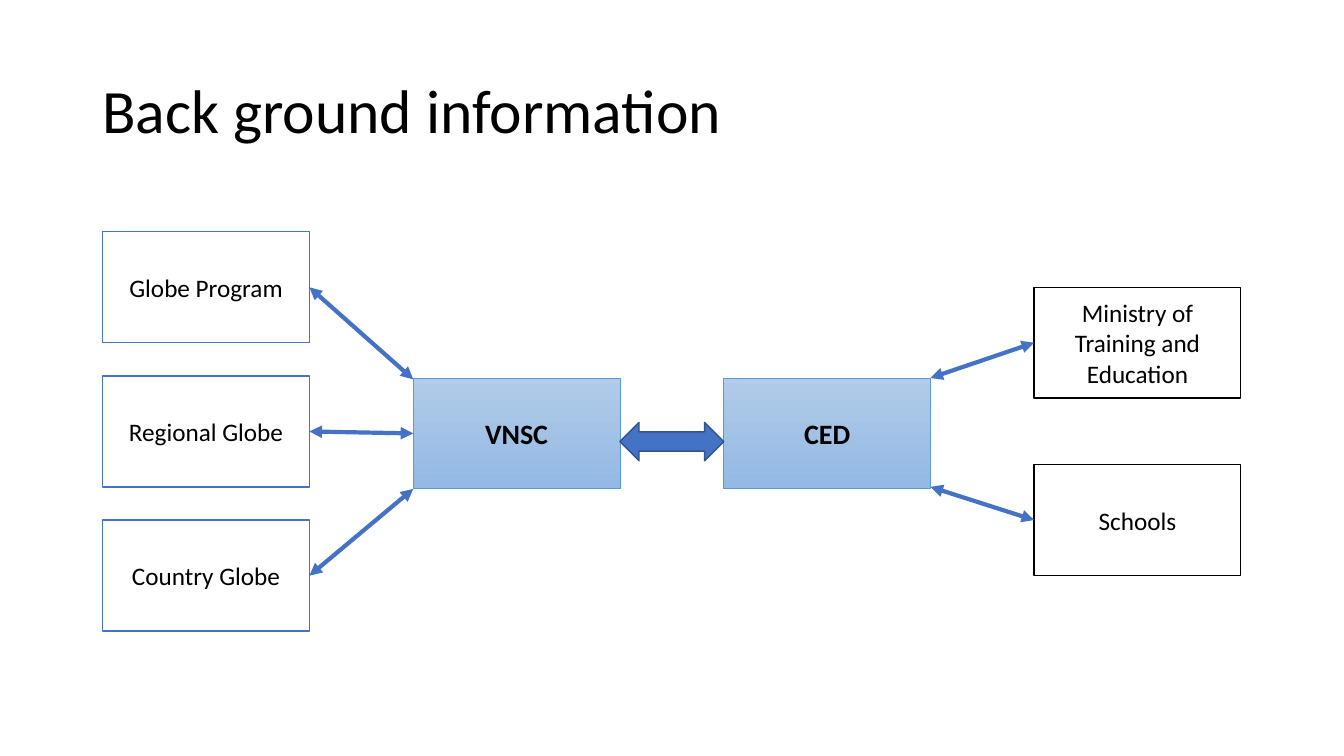
"""Build a slide that maps the links between Globe bodies, VNSC, CED and schools."""
import lxml.etree
import pptx
import pptx.dml.color
import pptx.enum.shapes
import pptx.enum.text
import pptx.oxml.ns
import pptx.util

Pt = pptx.util.Pt
RGBColor = pptx.dml.color.RGBColor
SHAPE = pptx.enum.shapes.MSO_SHAPE
ALIGN = pptx.enum.text.PP_ALIGN
MIDDLE = pptx.enum.text.MSO_ANCHOR.MIDDLE
qn = pptx.oxml.ns.qn

BLACK = RGBColor(0x00, 0x00, 0x00)
WHITE = RGBColor(0xFF, 0xFF, 0xFF)
BLUE = RGBColor(0x44, 0x72, 0xC4)
NAVY = RGBColor(0x32, 0x54, 0x91)
SKY = RGBColor(0x5B, 0x9B, 0xD5)
PALE = RGBColor(0xB1, 0xCB, 0xE9)
DEEP = RGBColor(0x93, 0xB9, 0xE4)

FONT = "Calibri"
WIDE, HIGH = 147.6, 79.2
LEFT, RIGHT = 73.4, 738.7
HUB_TOP = 270
HUB_LEFT, HUB_RIGHT = 295.2, 517
LEFT_TOP, LEFT_STEP = 165.6, 103
LEFT_NAMES = ("Globe Program", "Regional Globe", "Country Globe")
RIGHT_BOXES = (("Ministry of Training and Education", 205.2), ("Schools", 331.9))


def write(shape, text, size=18, bold=False, align=ALIGN.CENTER, space=1.0):
    frame = shape.text_frame
    frame.word_wrap = True
    frame.vertical_anchor = MIDDLE
    frame.text = text
    para = frame.paragraphs[0]
    para.alignment = align
    para.line_spacing = space
    font = para.runs[0].font
    font.name, font.size, font.bold = FONT, Pt(size), bold
    font.color.rgb = BLACK


def draw(slide, kind, left, top, width, height, edge, weight=1, fill=WHITE):
    shape = slide.shapes.add_shape(kind, Pt(left), Pt(top), Pt(width), Pt(height))
    shape.shadow.inherit = False
    shape.fill.solid()
    shape.fill.fore_color.rgb = fill
    shape.line.color.rgb = edge
    shape.line.width = Pt(weight)
    return shape


def add_box(slide, text, left, top, edge):
    box = draw(slide, SHAPE.RECTANGLE, left, top, WIDE, HIGH, edge)
    write(box, text)
    return box


def add_hub(slide, text, left):
    hub = draw(slide, SHAPE.RECTANGLE, left, HUB_TOP, WIDE, HIGH, SKY, weight=0.5)
    hub.fill.gradient()
    hub.fill.gradient_angle = 270
    for stop, color in zip(hub.fill.gradient_stops, (PALE, DEEP)):
        stop.color.rgb = color
    write(hub, text, size=20, bold=True)
    return hub


def add_link(slide, box, side, x, y):
    line = slide.shapes.add_connector(
        pptx.enum.shapes.MSO_CONNECTOR.STRAIGHT, Pt(x), Pt(y), Pt(x), Pt(y))
    line.end_connect(box, side)
    line.line.color.rgb = BLUE
    line.line.width = Pt(3)
    stroke = line.line._get_or_add_ln()
    for end in ("a:headEnd", "a:tailEnd"):
        lxml.etree.SubElement(stroke, qn(end), type="triangle")
    lxml.etree.SubElement(line._element.spPr, qn("a:effectLst"))
    return line


def add_title(slide, text):
    title = slide.shapes.title
    title.left, title.top = Pt(66), Pt(28.8)
    title.width, title.height = Pt(828), Pt(104.4)
    write(title, text, size=44, align=ALIGN.LEFT, space=0.9)


def main():
    deck = pptx.Presentation()
    deck.slide_width, deck.slide_height = Pt(960), Pt(540)
    slide = deck.slides.add_slide(deck.slide_layouts[5])
    add_title(slide, "Back ground information")

    vnsc = add_hub(slide, "VNSC", HUB_LEFT)
    add_hub(slide, "CED", HUB_RIGHT)
    start = HUB_LEFT + WIDE
    draw(slide, SHAPE.LEFT_RIGHT_ARROW, start, 301.7, HUB_RIGHT - start, 27.4,
         NAVY, fill=BLUE)

    lefts = [add_box(slide, name, LEFT, LEFT_TOP + row * LEFT_STEP, BLUE)
             for row, name in enumerate(LEFT_NAMES)]
    rights = [add_box(slide, name, RIGHT, top, BLACK) for name, top in RIGHT_BOXES]

    base = HUB_TOP + HIGH
    links = [add_link(slide, box, 3, HUB_LEFT, y)
             for box, y in zip(lefts, (HUB_TOP + 1, HUB_TOP + HIGH / 2, base))]
    links[1].begin_connect(vnsc, 1)
    for box, y in zip(rights, (HUB_TOP, base - 1.4)):
        add_link(slide, box, 1, HUB_RIGHT + WIDE, y)

    deck.save("out.pptx")


if __name__ == "__main__":
    main()
